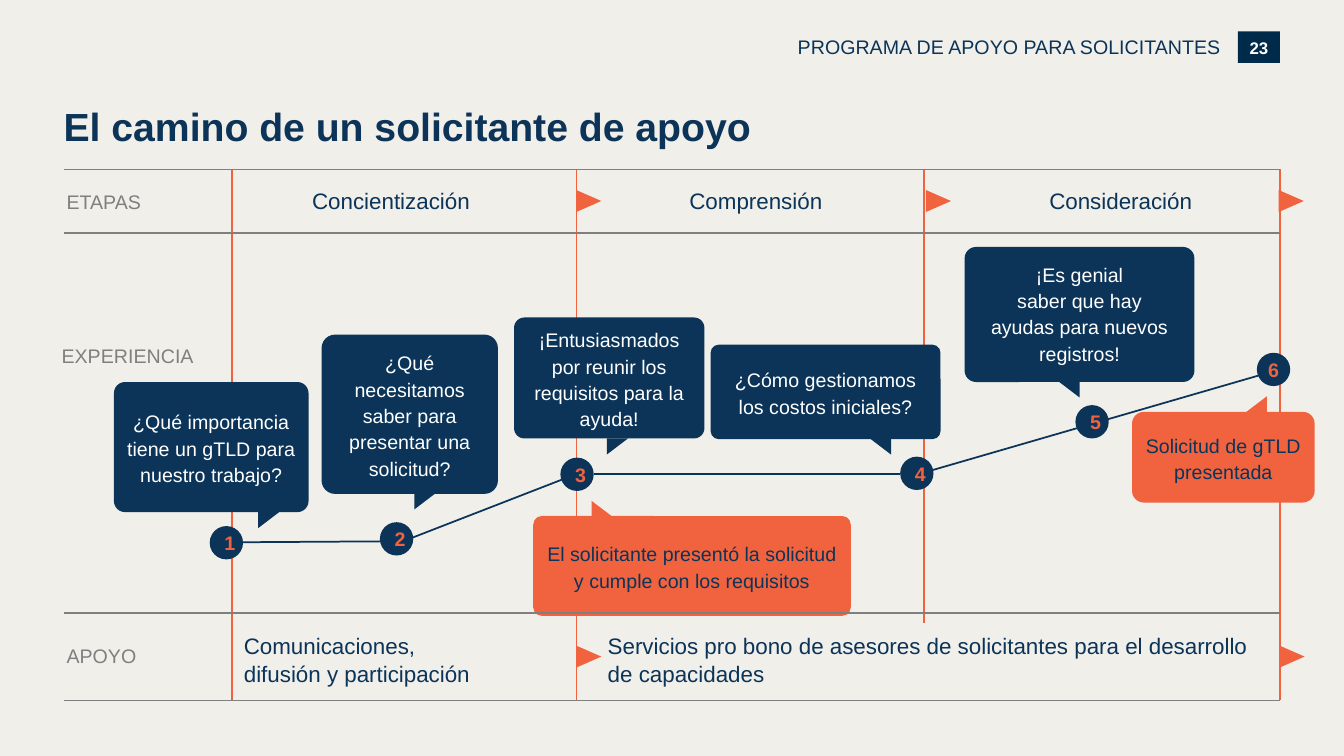
from lxml import etree
from pptx import Presentation
from pptx.dml.color import RGBColor
from pptx.enum.shapes import MSO_CONNECTOR, MSO_SHAPE
from pptx.enum.text import MSO_ANCHOR, MSO_AUTO_SIZE, PP_ALIGN
from pptx.oxml.ns import qn
from pptx.util import Pt

LEFT, CENTER, RIGHT = PP_ALIGN.LEFT, PP_ALIGN.CENTER, PP_ALIGN.RIGHT
TOP, MIDDLE = MSO_ANCHOR.TOP, MSO_ANCHOR.MIDDLE
FIXED = MSO_AUTO_SIZE.NONE
RECTANGLE, ROUNDED, OVAL = MSO_SHAPE.RECTANGLE, MSO_SHAPE.ROUNDED_RECTANGLE, MSO_SHAPE.OVAL
TRIANGLE, RIGHT_TRIANGLE = MSO_SHAPE.ISOSCELES_TRIANGLE, MSO_SHAPE.RIGHT_TRIANGLE
STRAIGHT = MSO_CONNECTOR.STRAIGHT

THEME = {
    "font": "Arial",
    "paper": RGBColor(0xF1, 0xEF, 0xEA),
    "navy": RGBColor(0x0B, 0x34, 0x58),
    "badge": RGBColor(0x00, 0x2A, 0x49),
    "orange": RGBColor(0xF1, 0x63, 0x3E),
    "gray": RGBColor(0x7F, 0x7F, 0x7F),
    "white": RGBColor(0xFF, 0xFF, 0xFF),
    "title": Pt(28), "stage": Pt(16), "body": Pt(14), "number": Pt(12),
}

deck = Presentation()
deck.slide_width, deck.slide_height = Pt(960), Pt(540)
page = deck.slides.add_slide(deck.slide_layouts[5])
page.background.fill.solid()
page.background.fill.fore_color.rgb = THEME["paper"]


def add_item(kind, left, top, width, height, fill=None):
    """Add a plain filled shape, or a text box when kind is None."""
    place = (Pt(left), Pt(top), Pt(width), Pt(height))
    if kind is None:
        return page.shapes.add_textbox(*place)
    shape = page.shapes.add_shape(kind, *place)
    shape.shadow.inherit = False
    shape.fill.solid()
    shape.fill.fore_color.rgb = THEME[fill]
    shape.line.fill.background()
    return shape


def write(shape, text, size, color, bold=False, align=LEFT, anchor=MIDDLE,
          spacing=1.0, insets=(0, 0, 0, 0)):
    """Set the text of a box; insets run left, top, right, bottom."""
    box = shape.text_frame
    left, top, right, bottom = map(Pt, insets)
    frame_format = {"word_wrap": True, "auto_size": FIXED, "vertical_anchor": anchor,
                    "margin_left": left, "margin_top": top,
                    "margin_right": right, "margin_bottom": bottom}
    for name, value in frame_format.items():
        setattr(box, name, value)
    para = box.paragraphs[0]
    para.text = text
    para.alignment, para.line_spacing = align, spacing
    for span in para.runs:
        for name, value in {"name": THEME["font"], "size": THEME[size], "bold": bold}.items():
            setattr(span.font, name, value)
        span.font.color.rgb = THEME[color]


# Header and title
write(add_item(RECTANGLE, 884.3, 22.5, 30, 22.5, "badge"), "23", "number", "white",
      bold=True, align=CENTER, spacing=1.08)
write(add_item(None, 524, 25.2, 348, 17.3), "PROGRAMA DE APOYO PARA SOLICITANTES",
      "body", "navy", align=RIGHT, anchor=TOP)
title = page.shapes.title
title_place = {"left": 45.4, "top": 69, "width": 612.7, "height": 41.8}
for name, value in title_place.items():
    setattr(title, name, Pt(value))
write(title, "El camino de un solicitante de apoyo", "title", "navy", bold=True)

# Row labels
for label, left, top in [("ETAPAS", 47.5, 135.4), ("EXPERIENCIA", 44, 246), ("APOYO", 47.5, 460)]:
    write(add_item(None, left, top, 120, 17.3), label, "body", "gray", anchor=TOP)

# Stage names
for index, stage in enumerate(["Concientización", "Comprensión", "Consideración"]):
    write(add_item(None, 163.4 + 260.6 * index, 126, 231.8, 33), stage, "stage", "navy",
          align=CENTER, spacing=1.06)

# Support row
supports = [
    ("Comunicaciones,\ndifusión y participación", 162.7, 249, (11.5, 0, 0, 0)),
    ("Servicios pro bono de asesores de solicitantes para el desarrollo de capacidades",
     411.8, 502, (22.3, 3.6, 7.2, 3.6)),
]
for text, left, width, insets in supports:
    write(add_item(None, left, 442.8, width, 55.4), text, "stage", "navy",
          spacing=1.06, insets=insets)

# Speech bubbles: text, left, top, width, height, fill, text colour, corner, bottom inset
bubbles = [
    ("¿Qué importancia tiene un gTLD para nuestro trabajo?",
     81.4, 272.9, 139, 92.9, "navy", "white", 0.085, 5.8),
    ("¿Qué necesitamos saber para presentar una solicitud?",
     229.7, 239, 126, 113.8, "navy", "white", 0.085, 5.8),
    ("¡Entusiasmados por reunir los requisitos para la ayuda!",
     367.2, 226.8, 136, 86.4, "navy", "white", 0.085, 5.8),
    ("¿Cómo gestionamos los costos iniciales?",
     507.6, 246.2, 164.2, 67.5, "navy", "white", 0.085, 5.8),
    ("¡Es genial\nsaber que hay\nayudas para nuevos registros!",
     689, 176.4, 164.2, 96.5, "navy", "white", 0.085, 8.6),
    ("El solicitante presentó la solicitud y cumple con los requisitos",
     380.9, 368.6, 226.8, 71.3, "orange", "navy", 0.085, 5.8),
    ("Solicitud de gTLD presentada",
     808.6, 294.2, 130.5, 64.8, "orange", "navy", 0.13, 5.8),
]
for text, left, top, width, height, fill, color, corner, bottom in bubbles:
    bubble = add_item(ROUNDED, left, top, width, height, fill)
    bubble.adjustments[0] = corner
    write(bubble, text, "body", color, align=CENTER, spacing=1.12,
          insets=(5.8, 5.8, 5.8, bottom))

# Bubble tails: left, top, rotation, mirrored, fill
tails = [
    (184.3, 365.8, 180, True, "navy"), (295.9, 352.4, 180, True, "navy"),
    (433.4, 313.2, 180, True, "navy"), (621.4, 313.2, 180, False, "navy"),
    (756, 272.4, 180, False, "navy"), (422.6, 357.8, 0, False, "orange"),
    (889.9, 283, 0, True, "orange"),
]
for left, top, rotation, mirrored, fill in tails:
    tail = add_item(RIGHT_TRIANGLE, left, top, 15.1, 11.5, fill)
    tail.rotation = rotation
    if mirrored:
        tail._element.spPr.find(qn("a:xfrm")).set("flipH", "1")

# Path between steps, stage dividers and row borders
rules = [
    (162, 387.4, 288, 386.6, "navy"),
    (288, 386.6, 410.4, 339.1, "navy"),
    (424.1, 338.4, 643, 338.4, "navy"),
    (659.5, 337.7, 913, 264.2, "navy"),
]
dividers = [(165.6, 500), (411.8, 500), (660.2, 445), (914.4, 500)]
rules += [(x, 121, x, bottom, "orange") for x, bottom in dividers]
rules += [(45.4, y, 914.4, y, "gray") for y in (121, 166.3, 437.8, 500.4)]
for x1, y1, x2, y2, color in rules:
    rule = page.shapes.add_connector(STRAIGHT, Pt(x1), Pt(y1), Pt(x2), Pt(y2))
    rule.line.color.rgb, rule.line.width = THEME[color], Pt(1.25)
    etree.SubElement(rule._element.spPr, qn("a:effectLst"))
    # Only row borders stay in front of the bubbles
    if color != "gray":
        page.shapes._spTree.insert(2, rule._element)

# Stage arrowheads
for left, top in [(412.6, 134.6), (662.4, 134.6), (914.4, 134.6), (412.6, 460), (915, 460)]:
    add_item(TRIANGLE, left, top, 15.8, 18, "orange").rotation = 90

# Numbered steps
steps = [(149.8, 375.8), (271.4, 373), (400.3, 326.9), (643, 326.2), (768.2, 289.4), (897.8, 252)]
for number, (left, top) in enumerate(steps, 1):
    side, edge = (0, 0) if number == len(steps) else (7.2, 3.6)
    write(add_item(OVAL, left, top, 23.8, 23.8, "navy"), str(number), "body", "orange",
          bold=True, align=CENTER, insets=(side, edge, side, edge))

deck.save("out.pptx")
